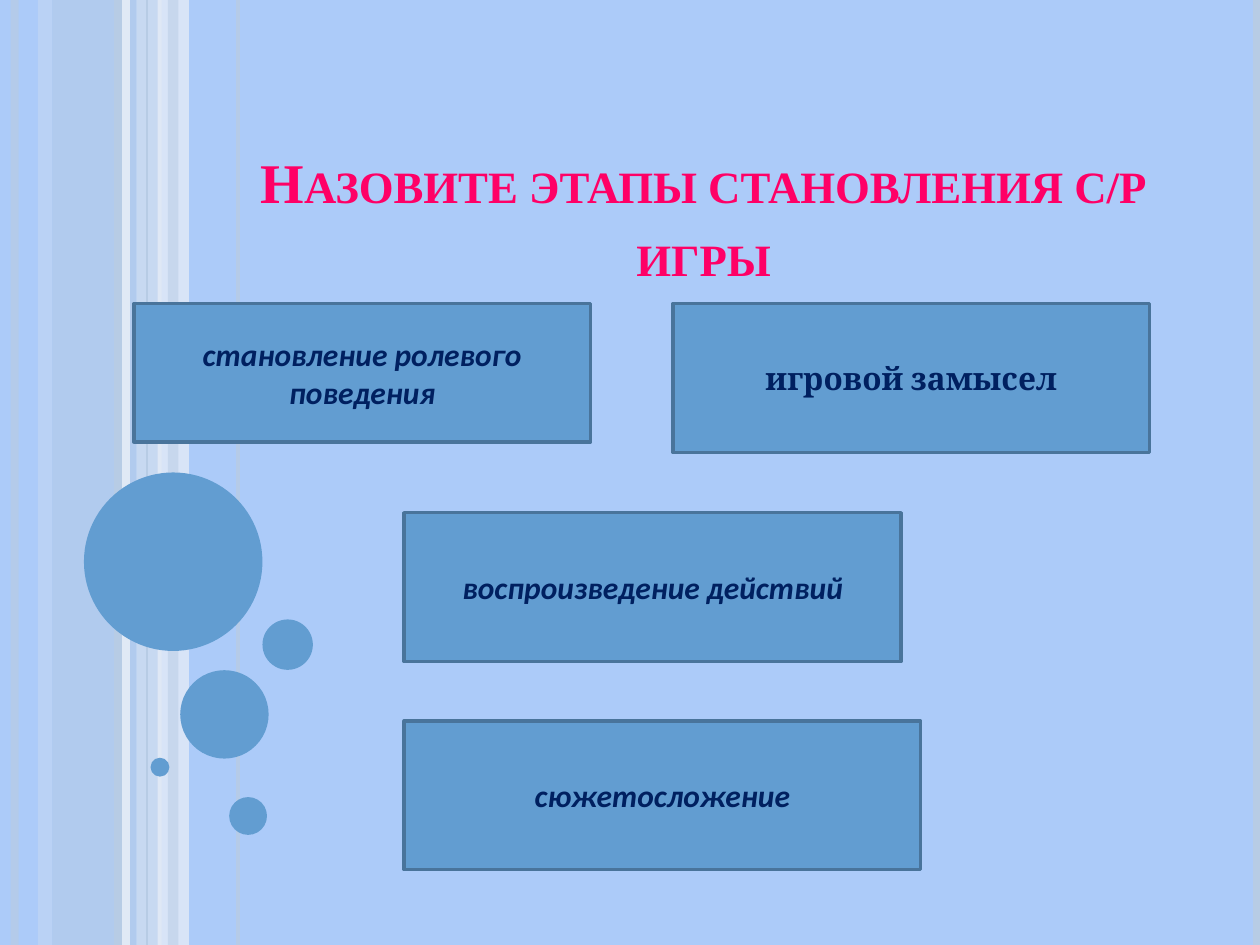
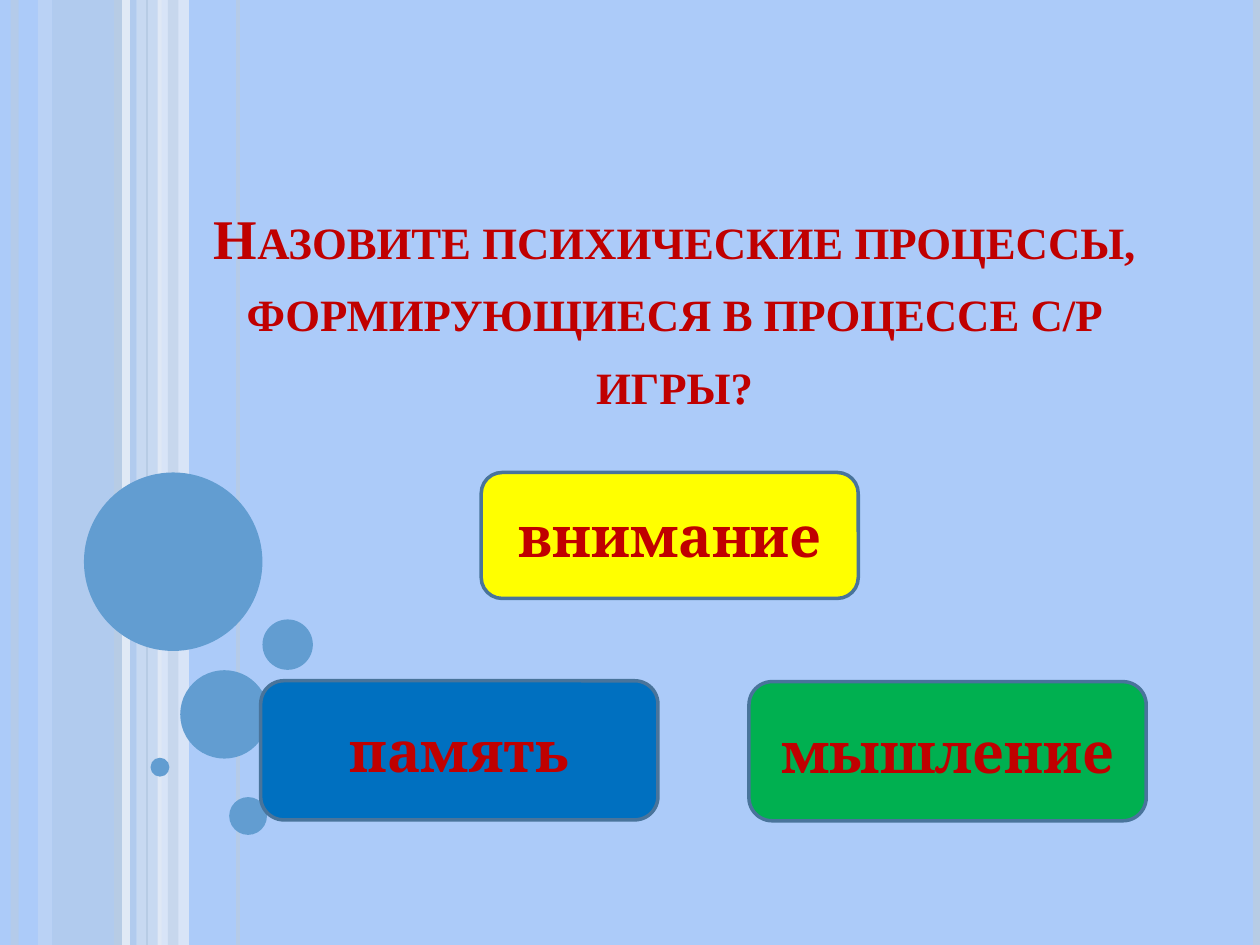
from lxml.etree import SubElement
from pptx import Presentation
from pptx.dml.color import RGBColor
from pptx.enum.shapes import MSO_CONNECTOR, MSO_SHAPE
from pptx.enum.text import MSO_ANCHOR, PP_ALIGN
from pptx.oxml.ns import qn
from pptx.util import Pt

SKY = RGBColor(0xAC, 0xCB, 0xF9)
STEEL = RGBColor(0xB7, 0xCC, 0xE5)
MIST = RGBColor(0xD3, 0xDF, 0xEE)
PALE = RGBColor(0xEA, 0xEF, 0xF7)
BLUE = RGBColor(0x62, 0x9D, 0xD1)
EDGE = RGBColor(0x49, 0x74, 0x9B)
NAVY = RGBColor(0x00, 0x20, 0x60)
PINK = RGBColor(0xFF, 0x00, 0x66)
RED = RGBColor(0xC0, 0x00, 0x00)
YELLOW = RGBColor(0xFF, 0xFF, 0x00)
AZURE = RGBColor(0x00, 0x70, 0xC0)
GREEN = RGBColor(0x00, 0xB0, 0x50)

WIDE, HIGH = 720, 540

# Left, width, colour, opacity in percent
BANDS = [
    (30, 48, STEEL, 54),
    (21.6, 8.2, MIST, 36),
    (78, 14.4, MIST, 70),
    (90, 18, PALE, 71),
]
SLIM = (96, 6, STEEL, 51)

# Left, line width, colour, opacity in percent
RULES = [
    (8.4, 4.5, STEEL, 73),
    (72, 4.5, PALE, 83),
    (67.2, 4.5, STEEL, 100),
    (136, 2.25, STEEL, 82),
    (84, 0.75, STEEL, 100),
    (718, 4.5, STEEL, 100),
]

# Left, top, diameter
DOTS = [
    (48, 270, 102),
    (103, 383, 50.5),
    (86, 433, 10.8),
    (131, 455.5, 21.6),
    (150, 354, 28.8),
]

# Title, its box and colour; then shape, text size and colour of the answers;
# each answer has its text, box, fill, font and slant
PAGES = [
    ("Назовите этапы становления с/р игры",
     (116, 49, 572, 119), PINK, MSO_SHAPE.RECTANGLE, 18, NAVY, [
         ("становление ролевого поведения",
          (76.5, 173.5, 261, 79), BLUE, "Calibri", True),
         ("игровой замысел",
          (384.5, 173.5, 272.5, 85), BLUE, "Cambria", False),
         ("воспроизведение действий",
          (231, 293, 284, 85), BLUE, "Calibri", True),
         ("сюжетосложение",
          (231, 412, 295, 85), BLUE, "Calibri", True),
     ]),
    ("Назовите психические процессы, формирующиеся в процессе с/р игры?",
     (105, 71, 561, 170), RED, MSO_SHAPE.ROUNDED_RECTANGLE, 32, RED, [
         ("внимание", (275, 270, 215.5, 72), YELLOW, "Cambria", False),
         ("память", (149, 389, 227, 79.5), AZURE, "Cambria", False),
         ("мышление", (428, 389.5, 227, 79.5), GREEN, "Cambria", False),
     ]),
]


def add(kind, box, color, clear=100):
    shape = slide.shapes.add_shape(kind, *[Pt(n) for n in box])
    shape.shadow.inherit = False
    shape.line.fill.background()
    shape.fill.solid()
    shape.fill.fore_color.rgb = color
    if clear < 100:
        tint = shape.fill._xPr.find(".//" + qn("a:srgbClr"))
        SubElement(tint, qn("a:alpha"), val=str(clear * 1000))
    return shape


def write(shape, text, font, size, color, anchor):
    frame = shape.text_frame
    frame.text = text
    frame.word_wrap = True
    frame.vertical_anchor = anchor
    par = frame.paragraphs[0]
    par.alignment = PP_ALIGN.CENTER
    face = par.runs[0].font
    face.name, face.size, face.bold = font, Pt(size), True
    face.color.rgb = color
    return par


deck = Presentation()
deck.slide_width, deck.slide_height = Pt(WIDE), Pt(HIGH)

for title, area, hue, kind, size, ink, answers in PAGES:
    slide = deck.slides.add_slide(deck.slide_layouts[6])
    slide.background.fill.solid()
    slide.background.fill.fore_color.rgb = SKY

    # Bands and rules
    for left, width, color, clear in BANDS:
        add(MSO_SHAPE.RECTANGLE, (left, 0, width, HIGH), color, clear)
    for left, width, color, clear in RULES:
        rule = slide.shapes.add_connector(
            MSO_CONNECTOR.STRAIGHT, Pt(left), Pt(0), Pt(left), Pt(HIGH))
        rule.line.width = Pt(width)
        rule.line.color.rgb = color
        props = rule._element.spPr
        SubElement(props, qn("a:effectLst"))
        if clear < 100:
            tint = props.find(".//" + qn("a:srgbClr"))
            SubElement(tint, qn("a:alpha"), val=str(clear * 1000))
    left, width, color, clear = SLIM
    add(MSO_SHAPE.RECTANGLE, (left, 0, width, HIGH), color, clear)

    # Circles
    for left, top, side in DOTS:
        add(MSO_SHAPE.OVAL, (left, top, side, side), BLUE)

    # Title in small capitals
    head = slide.shapes.add_textbox(*[Pt(n) for n in area])
    par = write(head, title, "Times New Roman", 32, hue, MSO_ANCHOR.BOTTOM)
    par.line_spacing = 1.08
    par.runs[0].font._element.set("cap", "small")

    # Answers
    for text, box, fill, font, slant in answers:
        card = add(kind, box, fill)
        card.line.color.rgb = EDGE
        card.line.width = Pt(2)
        par = write(card, text, font, size, ink, MSO_ANCHOR.MIDDLE)
        par.runs[0].font.italic = slant

deck.save("out.pptx")
